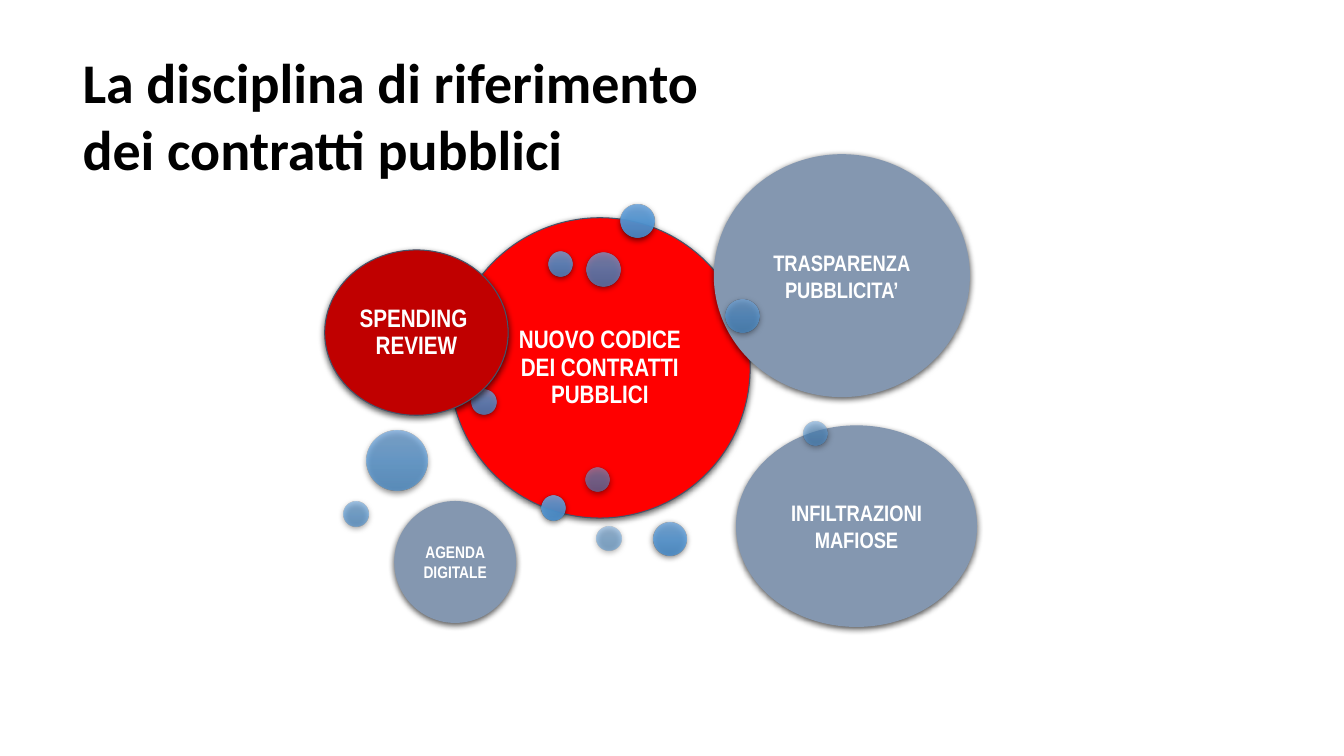
from lxml import etree
from pptx import Presentation
from pptx.dml.color import RGBColor
from pptx.enum.shapes import MSO_SHAPE
from pptx.enum.text import MSO_ANCHOR, PP_ALIGN
from pptx.oxml import parse_xml
from pptx.oxml.ns import nsdecls, qn
from pptx.util import Inches, Pt

BLACK = RGBColor(0x00, 0x00, 0x00)
WHITE = RGBColor(0xFF, 0xFF, 0xFF)
RED = RGBColor(0xFF, 0x00, 0x00)
DARK_RED = RGBColor(0xC0, 0x00, 0x00)
GREY_BLUE = RGBColor(0x84, 0x97, 0xB0)
SLATE = RGBColor(0x44, 0x54, 0x6A)
DOT_TOP = RGBColor(0x71, 0xA6, 0xDB)
DOT_MIDDLE = RGBColor(0x55, 0x9B, 0xDB)
DOT_BOTTOM = RGBColor(0x44, 0x8A, 0xCA)

SMALL, MEDIUM, LARGE = 0.24, 0.33, 0.6

# Back to front. Topic: left, top, width, height, text, size, fill, outlined.
# Dot: left, top, diameter.
BUBBLES = [
    (4.46, 2.16, 2.98, 2.98, "NUOVO CODICE DEI CONTRATTI PUBBLICI", 18, RED, True),
    (6.16, 2.03, MEDIUM),
    (5.37, 4.92, SMALL),
    (7.63, 3.37, SMALL),
    (6.48, 5.18, MEDIUM),
    (5.44, 2.5, SMALL),
    (4.68, 3.87, SMALL),
    (3.22, 2.48, 1.82, 1.64, "SPENDING \nREVIEW", 18, DARK_RED, True),
    (5.82, 2.51, MEDIUM),
    (3.64, 4.27, LARGE),
    (7.08, 1.53, 2.54, 2.41, "TRASPARENZA\nPUBBLICITA’", 16, GREY_BLUE, False),
    (7.2, 2.97, MEDIUM),
    (3.41, 4.98, SMALL),
    (5.81, 4.64, SMALL),
    (7.3, 4.22, 2.39, 2, "INFILTRAZIONI\nMAFIOSE", 16, GREY_BLUE, False),
    (7.97, 4.18, SMALL),
    (3.91, 4.97, 1.21, 1.21, "AGENDA\nDIGITALE", 12, GREY_BLUE, False),
    (5.92, 5.22, SMALL),
]


def add_bubble(left, top, width, height):
    """Add an ellipse with a soft shadow below it and no outline."""
    bubble = slide.shapes.add_shape(
        MSO_SHAPE.OVAL, Inches(left), Inches(top), Inches(width), Inches(height))
    bubble.line.fill.background()
    bubble.shadow.inherit = False
    effects = bubble.element.spPr.find(qn("a:effectLst"))
    shadow = etree.SubElement(
        effects, qn("a:outerShdw"), blurRad=str(Pt(4.5)), dist=str(Pt(1.5)),
        dir="5400000", algn="ctr", rotWithShape="0")
    color = etree.SubElement(shadow, qn("a:srgbClr"), val=str(BLACK))
    etree.SubElement(color, qn("a:alpha"), val="63000")
    return bubble


def fill_dot(dot, opacity):
    """Give the dot a vertical gradient; opacity is in percent."""
    stops = "".join(
        f'<a:gs pos="{position * 1000}"><a:srgbClr val="{color}">'
        f'<a:alpha val="{round(opacity * 1000)}"/></a:srgbClr></a:gs>'
        for position, color in ((0, DOT_TOP), (50, DOT_MIDDLE), (100, DOT_BOTTOM)))
    gradient = parse_xml(
        f'<a:gradFill {nsdecls("a")} rotWithShape="1"><a:gsLst>{stops}</a:gsLst>'
        '<a:lin ang="5400000" scaled="0"/></a:gradFill>')
    dot.fill.background()
    properties = dot.element.spPr
    properties.replace(properties.find(qn("a:noFill")), gradient)


deck = Presentation()
deck.slide_width = Inches(13.33)
deck.slide_height = Inches(7.5)
slide = deck.slides.add_slide(deck.slide_layouts[6])

for step, (left, top, width, *topic) in enumerate(BUBBLES, start=-1):
    if not topic:
        dot = add_bubble(left, top, width, width)
        fill_dot(dot, 90 - 2.5 * step)
        continue

    height, text, size, fill, outlined = topic
    bubble = add_bubble(left, top, width, height)
    bubble.fill.solid()
    bubble.fill.fore_color.rgb = fill
    if outlined:
        bubble.line.color.rgb = SLATE
        bubble.line.width = Pt(0.75)

    frame = bubble.text_frame
    frame.word_wrap = True
    frame.vertical_anchor = MSO_ANCHOR.MIDDLE
    inset = Inches(0.05 if size == 12 else 0.07)
    frame.margin_left = frame.margin_right = inset
    frame.margin_top = frame.margin_bottom = inset
    frame.text = text
    for para in frame.paragraphs:
        para.alignment = PP_ALIGN.CENTER
        para.line_spacing = 0.9 if outlined else 1.0
        for span in para.runs:
            span.font.name = "Arial Narrow"
            span.font.size = Pt(size)
            span.font.bold = True
            span.font.color.rgb = WHITE

title = slide.shapes.add_textbox(Inches(0.72), Inches(0.42), Inches(10.59), Inches(1.45))
title.text_frame.word_wrap = True
title.text_frame.text = "La disciplina di riferimento \ndei contratti pubblici"
for para in title.text_frame.paragraphs:
    for span in para.runs:
        span.font.name = "Calibri"
        span.font.size = Pt(40)
        span.font.bold = True
        span.font.color.rgb = BLACK

deck.save("out.pptx")
